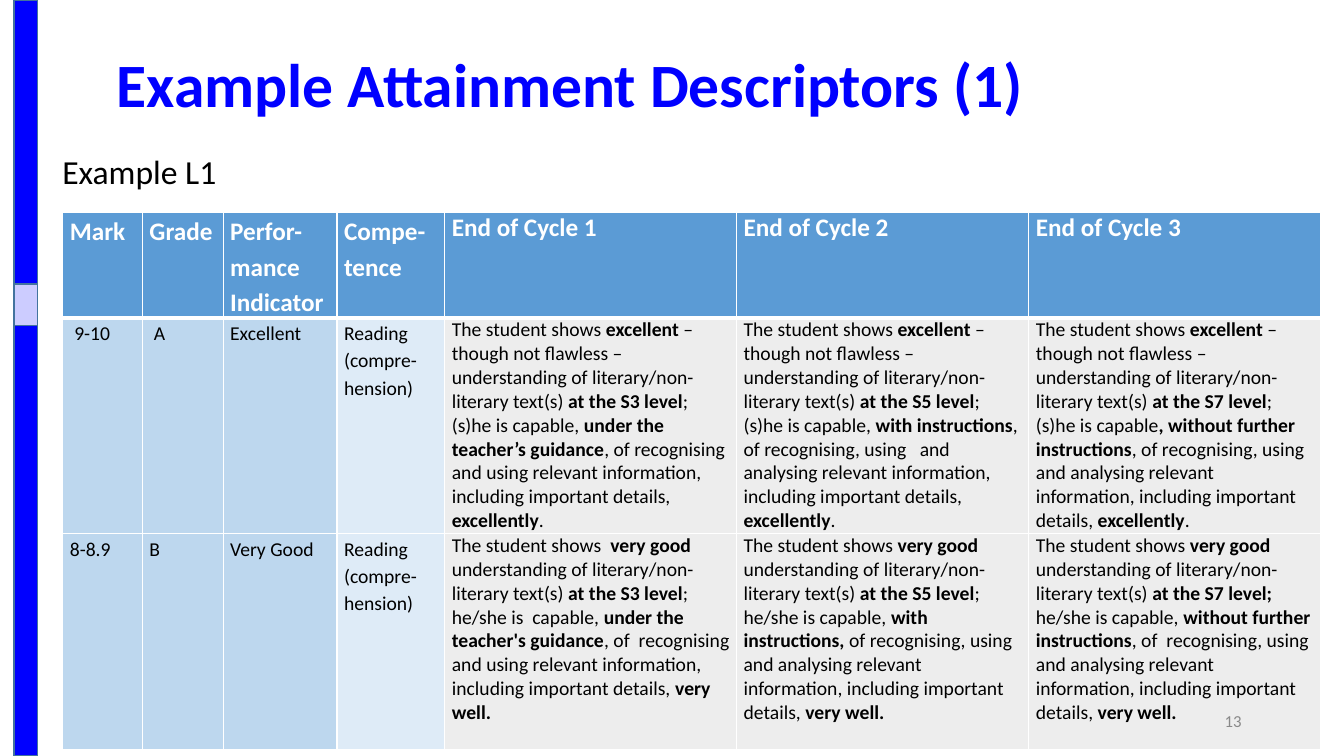
import pptx
import pptx.util
import pptx.dml.color
import pptx.enum.shapes
import pptx.enum.text
import pptx.oxml
import pptx.oxml.ns

Pt = pptx.util.Pt
ALIGN = pptx.enum.text.PP_ALIGN
ANCHOR = pptx.enum.text.MSO_ANCHOR

COLORS = {
    "title": "0000FF",
    "bar": "0000FF",
    "marker": "CCCCFF",
    "outline": "43739E",
    "header": "5B9BD5",
    "label": "BDD7EE",
    "competence": "DEEBF7",
    "descriptor": "EDEDED",
    "white": "FFFFFF",
    "text": "000000",
    "number": "898989",
}
LABEL_COLUMNS = 4
COLUMN_FILLS = ["label"] * 3 + ["competence"] + ["descriptor"] * 3
COLUMN_WIDTHS = [56.9, 57.6, 81.4, 77, 208.4, 208.8, 208.4]
ROW_HEIGHTS = [74.9, 154, 154]

# Text between double asterisks is bold.
ROWS = [
    ["Mark", "Grade", "Perfor-mance Indicator", "Compe-tence",
     "End of Cycle 1", "End of Cycle 2", "End of Cycle 3"],
    [" 9-10", " A", "Excellent", "Reading  (compre-hension)",
     "The student shows **excellent** – though not flawless – understanding of "
     "literary/non-literary text(s) **at the S3 level**; (s)he is capable, "
     "**under the teacher’s guidance**, of recognising and using relevant "
     "information, including important details, **excellently**.",
     "The student shows **excellent** – though not flawless – understanding of "
     "literary/non-literary text(s) **at the S5 level**; (s)he is capable, "
     "**with instructions**, of recognising, using   and analysing relevant "
     "information, including important details, **excellently**.",
     "The student shows **excellent** – though not flawless – understanding of "
     "literary/non-literary text(s) **at the S7 level**; (s)he is capable"
     "**, without further instructions**, of recognising, using and analysing "
     "relevant information, including important details, **excellently**."],
    ["8-8.9", "B", "Very Good", "Reading (compre-hension)",
     "The student shows  **very good **understanding of "
     "literary/non-literary text(s) **at the S3 level**; he/she is  capable, "
     "**under the teacher's guidance**, of  recognising and using relevant "
     "information, including important details, **very well.**",
     "The student shows **very good **understanding of "
     "literary/non-literary text(s) **at the S5 level**; he/she is capable, "
     "**with instructions,** of recognising, using   and analysing relevant "
     "information, including important details, **very well.**",
     "The student shows **very good ** understanding of "
     "literary/non-literary text(s) **at the S7 level;** he/she is capable, "
     "**without further instructions**, of  recognising, using and analysing "
     "relevant information, including important details, **very well.**"],
]


def rgb(name):
    return pptx.dml.color.RGBColor.from_string(COLORS[name])


def style_paragraph(p, size, color, bold=None, spacing=None):
    p.font.name = "Calibri"
    p.font.size = Pt(size)
    p.font.color.rgb = rgb(color)
    p.font.bold = bold
    p.line_spacing = spacing


def add_text(s, box, text, size, color, bold=None, spacing=None,
             align=ALIGN.LEFT, anchor=ANCHOR.TOP):
    tf = s.shapes.add_textbox(*map(Pt, box)).text_frame
    tf.word_wrap = True
    tf.vertical_anchor = anchor
    p = tf.paragraphs[0]
    p.text = text
    p.alignment = align
    style_paragraph(p, size, color, bold, spacing)


def add_bar(s, top, height, fill):
    sp = s.shapes.add_shape(pptx.enum.shapes.MSO_SHAPE.RECTANGLE,
                            Pt(10.1), Pt(top), Pt(16.6), Pt(height))
    sp.shadow.inherit = False
    sp.fill.solid()
    sp.fill.fore_color.rgb = rgb(fill)
    sp.line.color.rgb = rgb("outline")
    sp.line.width = Pt(1)


def set_borders(cell, widths):
    """Draw white borders; widths are left, right, top, bottom in points."""
    tcPr = cell._tc.get_or_add_tcPr()
    for i, (side, width) in enumerate(zip("LRTB", widths)):
        tcPr.insert(i, pptx.oxml.parse_xml(
            f'<a:ln{side} {pptx.oxml.ns.nsdecls("a")} w="{Pt(width)}"><a:solidFill>'
            f'<a:srgbClr val="{COLORS["white"]}"/></a:solidFill></a:ln{side}>'))


def fill_cell(cell, text, row, col):
    header = row == 0
    cell.margin_left = cell.margin_right = Pt(5)
    cell.margin_top = cell.margin_bottom = Pt(0)
    cell.fill.solid()
    cell.fill.fore_color.rgb = rgb("header" if header else COLUMN_FILLS[col])
    set_borders(cell, (1, 1, 3 if row == 1 else 1, 3 if header else 1))
    p = cell.text_frame.paragraphs[0]
    style_paragraph(p, 18 if header else 14, "white" if header else "text",
                    header, 1.15 if col < LABEL_COLUMNS else None)
    for i, part in enumerate(text.split("**")):
        if part:
            r = p.add_run()
            r.text = part
            if i % 2:
                r.font.bold = True


def add_descriptor_table(s):
    table = s.shapes.add_table(
        len(ROWS), len(COLUMN_WIDTHS), Pt(44.9), Pt(151.5),
        Pt(sum(COLUMN_WIDTHS)), Pt(sum(ROW_HEIGHTS))).table
    for column, width in zip(table.columns, COLUMN_WIDTHS):
        column.width = Pt(width)
    for i, (row, height) in enumerate(zip(table.rows, ROW_HEIGHTS)):
        row.height = Pt(height)
        for j, text in enumerate(ROWS[i]):
            fill_cell(table.cell(i, j), text, i, j)


def main():
    prs = pptx.Presentation()
    prs.slide_width, prs.slide_height = Pt(960), Pt(540)
    s = prs.slides.add_slide(prs.slide_layouts[6])
    add_descriptor_table(s)
    add_text(s, (76.3, 35.3, 725, 104.4), "Example Attainment Descriptors (1)",
             44, "title", bold=True, spacing=0.9)
    add_text(s, (678, 500.5, 216, 28.8), "13", 12, "number",
             align=ALIGN.RIGHT, anchor=ANCHOR.MIDDLE)
    add_bar(s, 0, 540, "bar")
    add_bar(s, 203, 29.5, "marker")
    add_text(s, (37.4, 104.4, 615.6, 36.7), "Example L1", 24, "text")
    prs.save("out.pptx")


if __name__ == "__main__":
    main()
